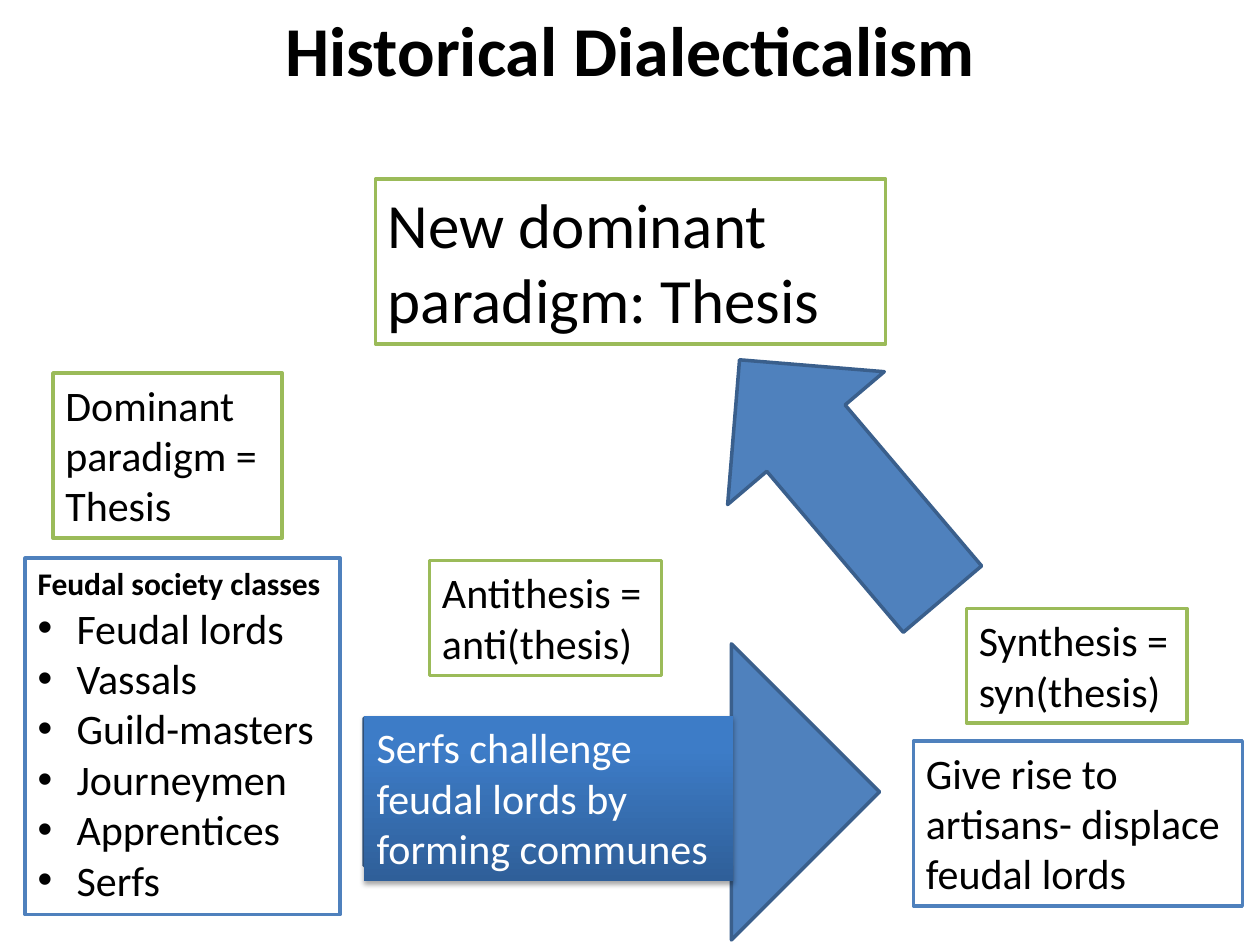
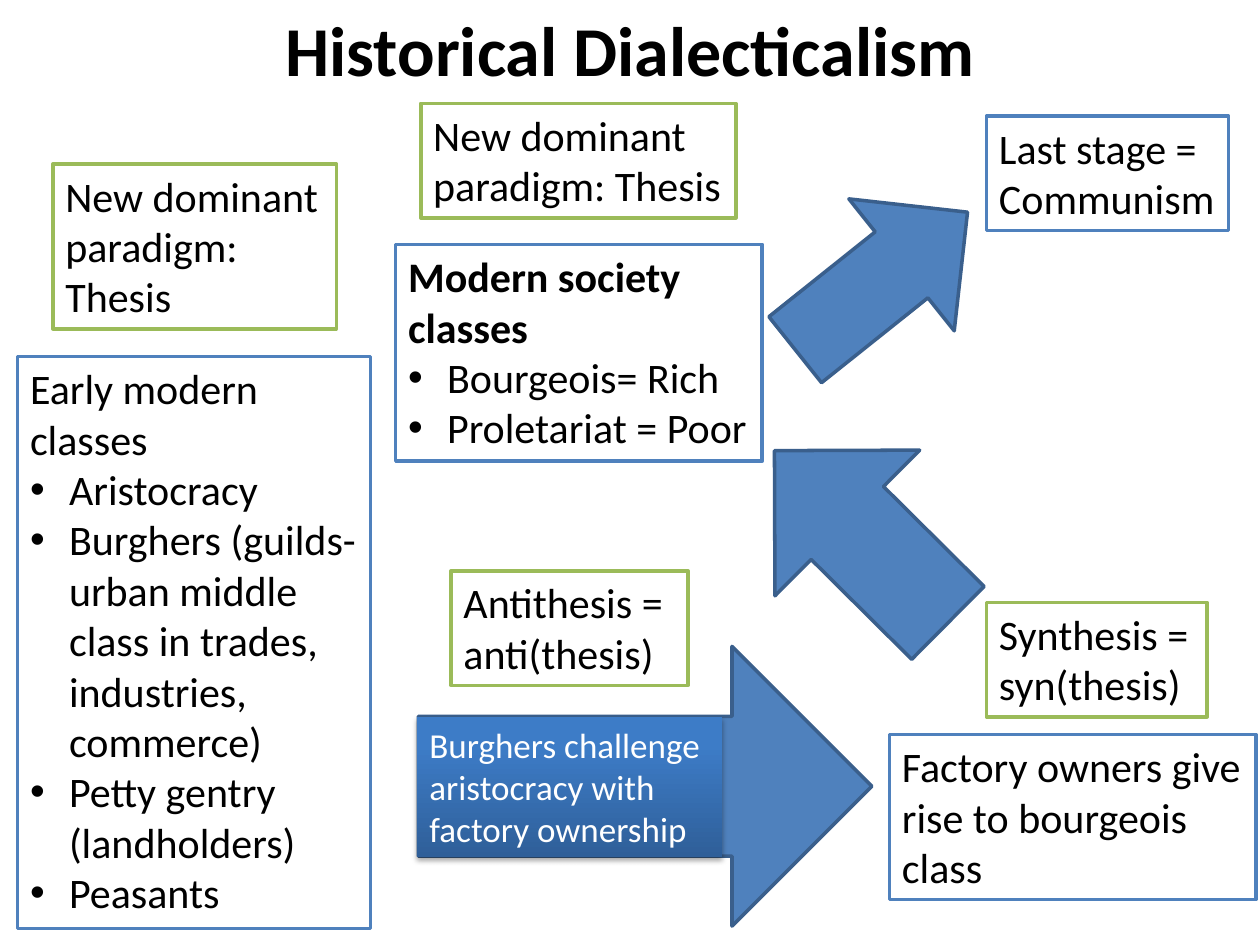
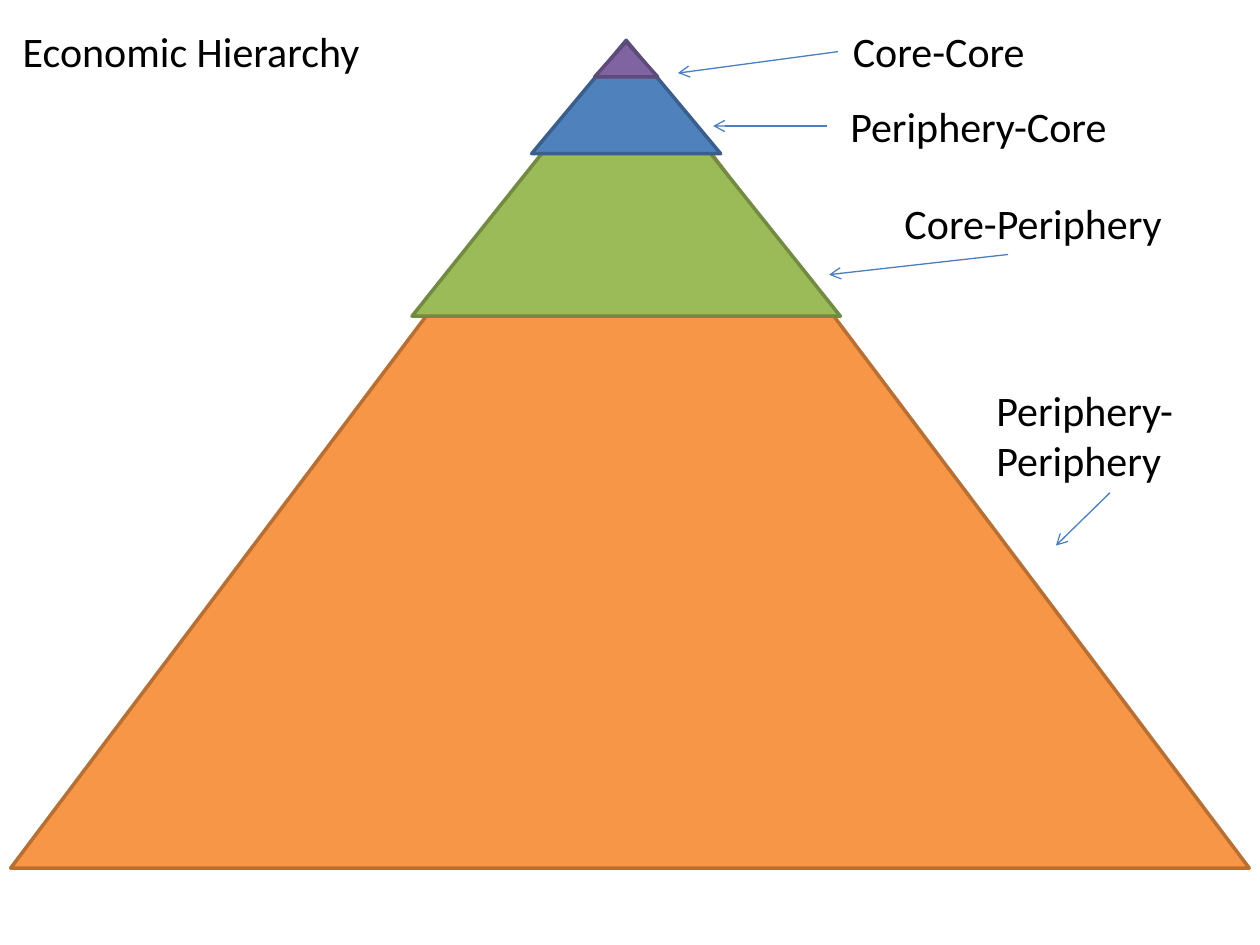
from lxml.etree import SubElement
from pptx import Presentation
from pptx.dml.color import RGBColor
from pptx.enum.shapes import MSO_CONNECTOR, MSO_SHAPE
from pptx.enum.text import MSO_ANCHOR, MSO_AUTO_SIZE, PP_ALIGN
from pptx.oxml.ns import qn
from pptx.util import Emu, Inches, Pt

FONT = "Calibri"
BLACK, WHITE = "000000", "FFFFFF"
BLUE, NAVY, GREEN, LINK = "4F81BD", "3A5F8C", "9BBB59", "4B7EBC"
DARK, LIGHT = "2F5F99", "3D7CC7"
HANG = 0.31
UP, RIGHT = MSO_SHAPE.UP_ARROW, MSO_SHAPE.RIGHT_ARROW

# Green boxes name a stage, blue boxes tell what happens in it.
# Box: place (left, top, width, height), edge, lines, then options.
# Arrow: shape, place, turn in degrees.
STAGES = [
    {
        "arrows": [(RIGHT, (2.89, 5.11, 4.09, 2.35), 0),
                   (UP, (5.86, 2.56, 1.63, 2.49), 319.7)],
        "clash": ((2.89, 5.68, 2.93, 1.31), 24,
                  "Serfs challenge feudal lords by forming communes"),
        "boxes": [
            ((7.25, 5.88, 2.61, 1.31), BLUE,
             ["Give rise to artisans- displace feudal lords"], {}),
            ((0.2, 4.43, 2.5, 2.83), BLUE, ["Feudal society classes"],
             {"size": 18, "bold": True,
              "items": ["Feudal lords", "Vassals", "Guild-masters",
                        "Journeymen", "Apprentices", "Serfs"]}),
            ((0.42, 2.96, 1.82, 1.31), GREEN,
             ["Dominant paradigm =", "Thesis"], {}),
            ((3.41, 4.45, 1.84, 0.91), GREEN,
             ["Antithesis =", "anti(thesis)"], {}),
            ((7.67, 4.83, 1.75, 0.91), GREEN, ["Synthesis = syn(thesis)"], {}),
            ((2.98, 1.42, 4.05, 1.31), GREEN,
             ["New dominant paradigm: Thesis"], {"size": 36}),
        ],
    },
    {
        "arrows": [(RIGHT, (3.32, 5.13, 3.6, 2.22), 0),
                   (UP, (6.02, 3.29, 1.63, 1.94), 314.8),
                   (RIGHT, (6.12, 1.56, 1.75, 1.34), 321.4)],
        "clash": ((3.31, 5.69, 2.42, 1.11), 20,
                  "Burghers challenge aristocracy with factory ownership"),
        "boxes": [
            ((7.06, 5.83, 2.91, 1.31), BLUE,
             ["Factory owners give rise to bourgeois class"], {}),
            ((0.42, 1.3, 2.25, 1.31), GREEN,
             ["New dominant paradigm:", "Thesis"], {}),
            ((3.58, 4.53, 1.88, 0.91), GREEN,
             ["Antithesis = anti(thesis)"], {}),
            ((0.14, 2.83, 2.8, 4.54), BLUE, ["Early modern classes"],
             {"items": ["Aristocracy",
                        "Burghers (guilds- urban middle class in trades, "
                        "industries, commerce)",
                        "Petty gentry (landholders)", "Peasants"]}),
            ((7.83, 4.78, 1.75, 0.91), GREEN, ["Synthesis = syn(thesis)"], {}),
            ((3.34, 0.82, 2.5, 0.91), GREEN,
             ["New dominant paradigm: Thesis"], {}),
            ((3.14, 1.94, 2.91, 1.72), BLUE, ["Modern society classes"],
             {"bold": True,
              "items": ["Bourgeois= Rich", "Proletariat = Poor"]}),
            ((7.83, 0.92, 1.92, 0.91), BLUE,
             ["Last stage =", "Communism"], {}),
        ],
    },
]

# Tier, widest first: middle, top, width, height, fill, edge.
TIERS = [
    (5, 0.36, 9.83, 6.53, "F79646", "B76F34"),
    (4.97, 0.38, 3.4, 2.13, GREEN, "738A42"),
    (4.97, 0.32, 1.5, 0.9, BLUE, NAVY),
    (4.97, 0.33, 0.5, 0.28, "8064A2", "5F4A78"),
]
# Label: text, place, start and end of its pointer.
LABELS = [
    ("Core-Core", (6.67, 0.15, 2, 0.5), (6.65, 0.41), (5.38, 0.58)),
    ("Periphery-Core", (6.65, 0.75, 2.33, 0.5), (6.56, 1), (5.66, 1)),
    ("Core-Periphery", (7.08, 1.52, 2.58, 0.5), (8, 2.02), (6.58, 2.18)),
    ("Periphery-Periphery", (7.81, 3, 2, 0.91), (8.81, 3.91), (8.38, 4.33)),
]


def rgb(code):
    return RGBColor.from_string(code)


def inch(nums):
    return [Inches(n) for n in nums]


def outline(shape, edge):
    shape.line.color.rgb = rgb(edge)
    shape.line.width = Pt(2)


def write(par, text, size=24, bold=False, color=BLACK):
    run = par.add_run()
    run.text = text
    font = run.font
    font.name, font.size, font.bold = FONT, Pt(size), bold
    font.color.rgb = rgb(color)


def bullet(par):
    props = par._p.get_or_add_pPr()
    props.set("marL", str(Inches(HANG)))
    props.set("indent", str(-Inches(HANG)))
    SubElement(props, qn("a:buFont")).set("typeface", "Arial")
    SubElement(props, qn("a:buChar")).set("char", "•")


def add_text(slide, place, lines, items=(), size=24, bold=False, color=BLACK):
    """Add a text box with plain lines followed by bulleted items."""
    box = slide.shapes.add_textbox(*inch(place))
    frame = box.text_frame
    frame.word_wrap = True
    for i, text in enumerate([*lines, *items]):
        par = frame.add_paragraph() if i else frame.paragraphs[0]
        if i < len(lines):
            write(par, text, size, bold, color)
        else:
            bullet(par)
            write(par, text)
    return box


def add_box(slide, place, edge, lines, opts):
    box = add_text(slide, place, lines, **opts)
    box.fill.solid()
    box.fill.fore_color.rgb = rgb(WHITE)
    outline(box, edge)


def add_clash(slide, place, size, text):
    """Add the shaded box that lies on the big arrow."""
    box = add_text(slide, place, [text], size=size, color=WHITE)
    box.fill.gradient()
    box.fill.gradient_angle = 90
    for stop, (pos, code) in zip(box.fill.gradient_stops,
                                 [(0, DARK), (0.8, LIGHT)]):
        stop.position = pos
        stop.color.rgb = rgb(code)
    box.line.fill.background()
    fx = SubElement(box._element.spPr, qn("a:effectLst"))
    shade = SubElement(fx, qn("a:outerShdw"), blurRad=str(Pt(3.1)),
                       dist=str(Pt(1.8)), dir="5400000", rotWithShape="0")
    tint = SubElement(shade, qn("a:srgbClr"), val=BLACK)
    SubElement(tint, qn("a:alpha"), val="35000")


def add_form(slide, kind, place, fill, edge, turn=0):
    form = slide.shapes.add_shape(kind, *inch(place))
    form.shadow.inherit = False
    form.fill.solid()
    form.fill.fore_color.rgb = rgb(fill)
    outline(form, edge)
    form.rotation = turn


def add_link(slide, start, end):
    link = slide.shapes.add_connector(MSO_CONNECTOR.STRAIGHT,
                                      *inch(start + end))
    link.line.color.rgb = rgb(LINK)
    link.line.width = Pt(0.75)
    props = link._element.spPr
    SubElement(props.find(qn("a:ln")), qn("a:tailEnd")).set("type", "arrow")
    SubElement(props, qn("a:effectLst"))


def new_slide(deck, text, place, size, bold, align):
    """Add a title-only slide and set its title."""
    slide = deck.slides.add_slide(deck.slide_layouts[5])
    title = slide.shapes.title
    title.left, title.top, title.width, title.height = inch(place)
    frame = title.text_frame
    frame.auto_size = MSO_AUTO_SIZE.NONE
    frame.vertical_anchor = MSO_ANCHOR.TOP
    par = frame.paragraphs[0]
    par.alignment = align
    write(par, text, size, bold)
    return slide


def main():
    deck = Presentation()
    deck.slide_width, deck.slide_height = inch((10, 7.5))

    for stage in STAGES:
        slide = new_slide(deck, "Historical Dialecticalism",
                          (0, 0, 10, 0.77), 40, True, PP_ALIGN.CENTER)
        for kind, place, turn in stage["arrows"]:
            add_form(slide, kind, place, BLUE, NAVY, turn)
        add_clash(slide, *stage["clash"])
        for box in stage["boxes"]:
            add_box(slide, *box)

    slide = new_slide(deck, "Economic Hierarchy",
                      (0.08, 0.15, 2.92, 0.5), 24, False, PP_ALIGN.LEFT)
    for mid, top, wide, high, fill, edge in TIERS:
        add_form(slide, MSO_SHAPE.ISOSCELES_TRIANGLE,
                 (mid - wide / 2, top, wide, high), fill, edge)
    for text, place, start, end in LABELS:
        add_text(slide, place, [text])
        add_link(slide, start, end)

    deck.save("out.pptx")


if __name__ == "__main__":
    main()
